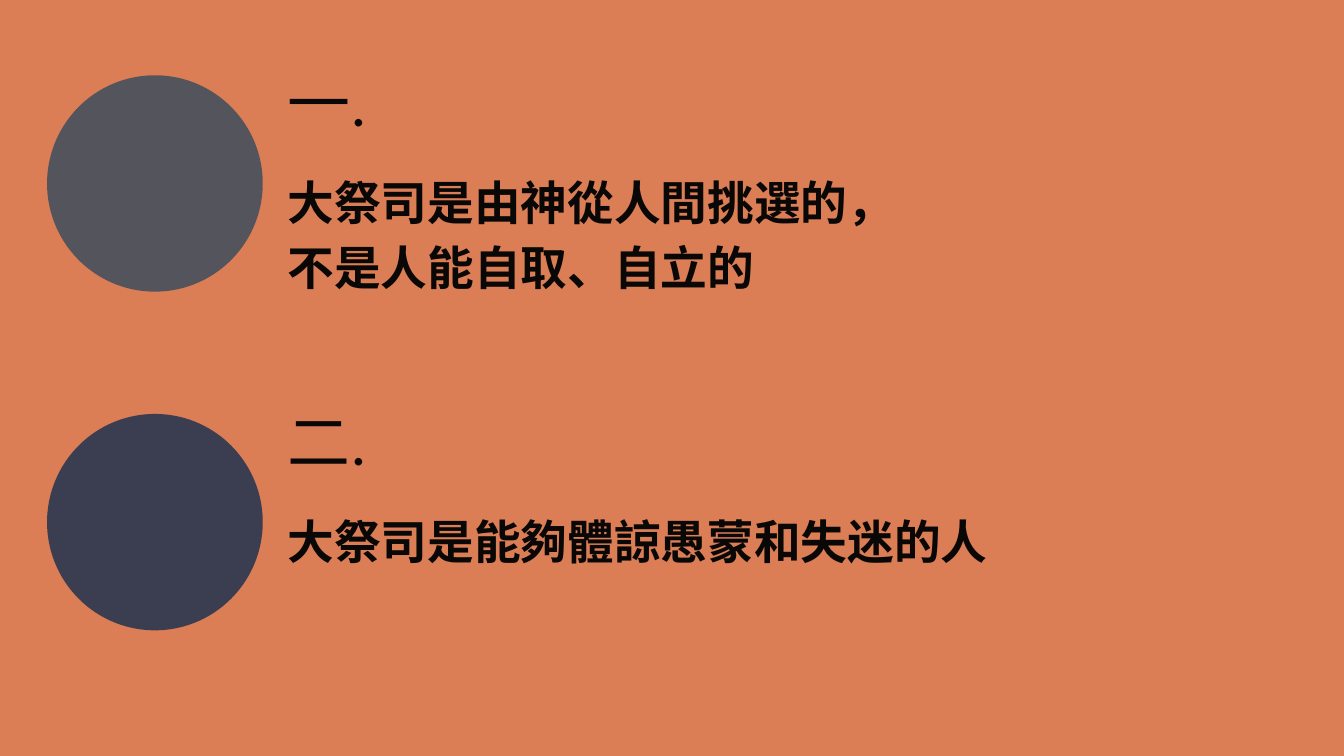
from pptx import Presentation
from pptx.dml.color import RGBColor
from pptx.enum.shapes import MSO_SHAPE
from pptx.enum.text import MSO_AUTO_SIZE
from pptx.util import Inches, Pt

COLORS = {"background": "DB7D55", "gray": "54545D", "navy": "3B3D50", "ink": "090807"}
FONT = "Calibri"
NUMBER = {"size": Pt(67.4), "bold": False}
BODY = {"size": Pt(50), "bold": True}

# Number, circle colour, body lines, body width and height
POINTS = [
    ("一.", "gray", ["大祭司是由神從人間挑選的,".replace(",", "，"), "不是人能自取、自立的"], 10.25, 1.9),
    ("二.", "navy", ["大祭司是能夠體諒愚蒙和失迷的人"], 10.57, 0.92),
]
FIRST_TOP, ROW_STEP = 1.12, 5.04
CIRCLE_LEFT, TEXT_LEFT = 0.7, 4.28


def rgb(name):
    return RGBColor.from_string(COLORS[name])


def add_circle(s, top, color):
    sp = s.shapes.add_shape(MSO_SHAPE.OVAL, Inches(CIRCLE_LEFT), Inches(top),
                            Inches(3.21), Inches(3.22))
    sp.shadow.inherit = False
    sp.fill.solid()
    sp.fill.fore_color.rgb = rgb(color)
    sp.line.fill.background()


def add_text(s, top, width, height, lines, spacing, style):
    tf = s.shapes.add_textbox(Inches(TEXT_LEFT), Inches(top),
                              Inches(width), Inches(height)).text_frame
    frame = {"word_wrap": True, "auto_size": MSO_AUTO_SIZE.SHAPE_TO_FIT_TEXT,
             "margin_left": 0, "margin_top": 0, "margin_right": 0, "margin_bottom": 0}
    for name, value in frame.items():
        setattr(tf, name, value)
    for i, line in enumerate(lines):
        p = tf.add_paragraph() if i else tf.paragraphs[0]
        p.line_spacing = Pt(spacing)
        r = p.add_run()
        r.text = line
        for name, value in {"name": FONT, **style}.items():
            setattr(r.font, name, value)
        r.font.color.rgb = rgb("ink")


def main():
    prs = Presentation()
    prs.slide_width, prs.slide_height = Inches(20), Inches(11.25)
    s = prs.slides.add_slide(prs.slide_layouts[6])

    # Background
    s.background.fill.solid()
    s.background.fill.fore_color.rgb = rgb("background")

    # One row per point: circle, number, body
    for i, (number, color, lines, width, height) in enumerate(POINTS):
        top = FIRST_TOP + i * ROW_STEP
        add_circle(s, top, color)
        add_text(s, top - 0.36, 3.6, 1.48, [number], 94.4, NUMBER)
        add_text(s, top + 1.33, width, height, lines, 70, BODY)

    prs.save("out.pptx")


if __name__ == "__main__":
    main()
